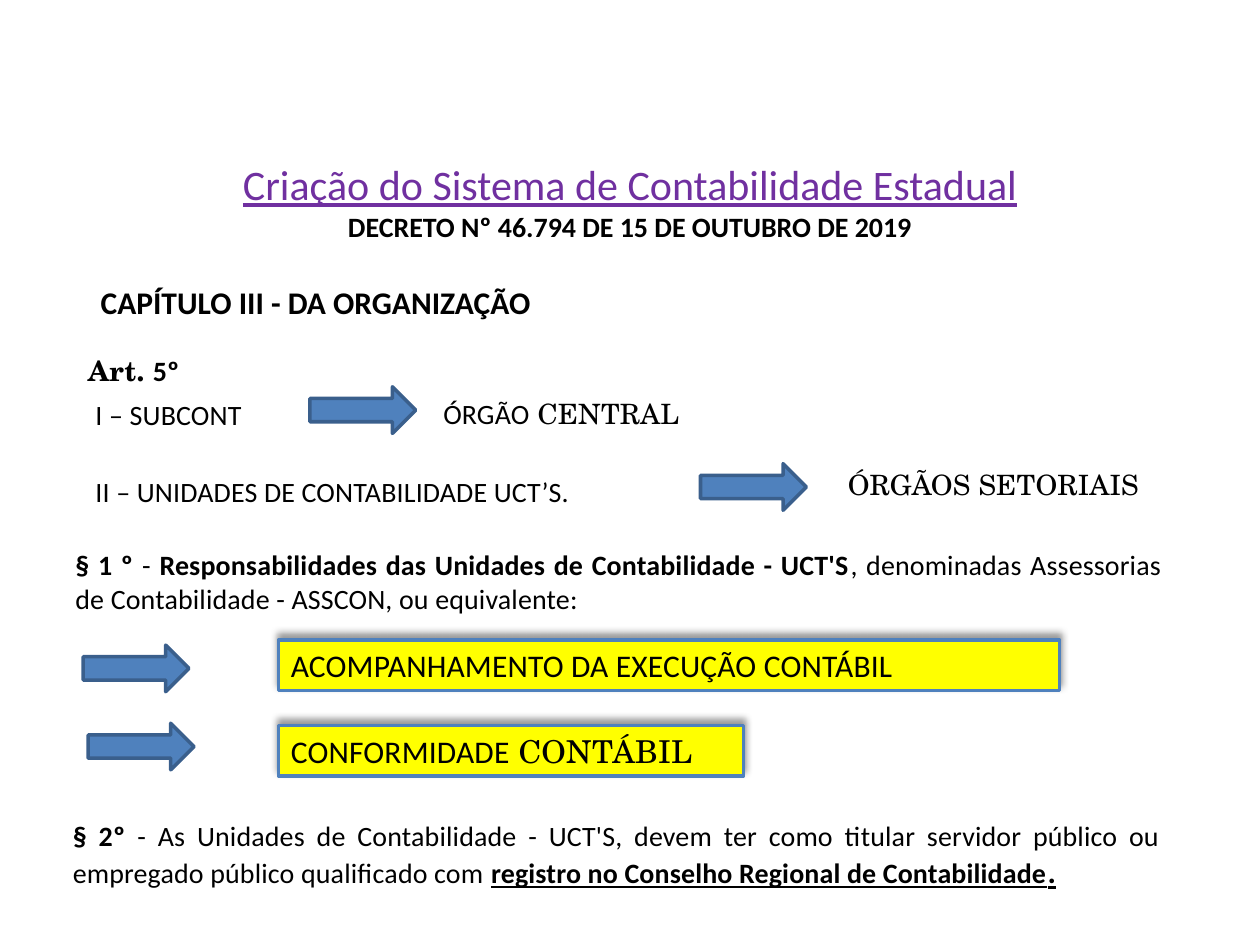
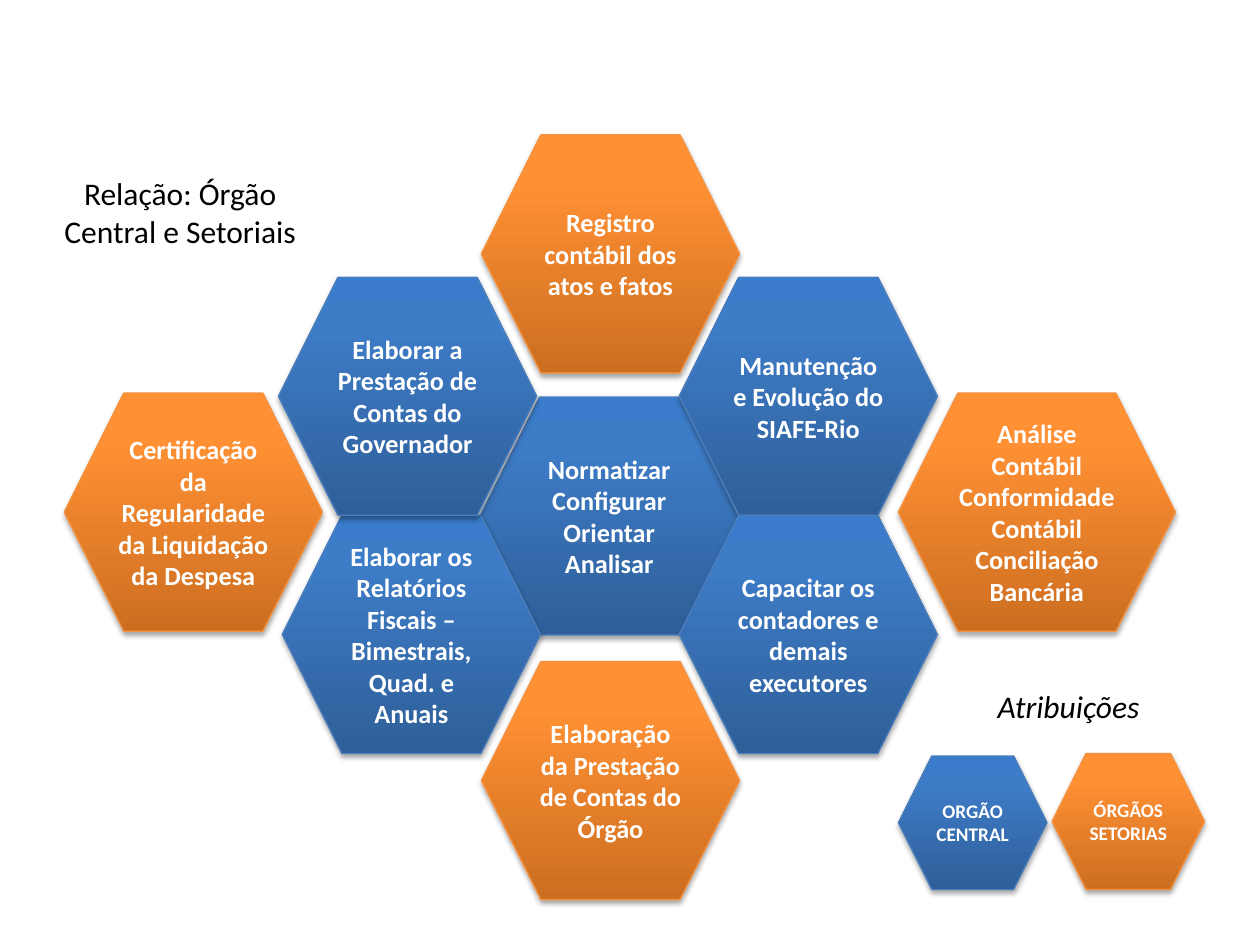
from lxml import etree
from pptx import Presentation
from pptx.dml.color import RGBColor
from pptx.enum.shapes import MSO_SHAPE
from pptx.enum.text import MSO_ANCHOR, MSO_AUTO_SIZE, PP_ALIGN
from pptx.oxml.ns import qn
from pptx.util import Emu, Pt

LEFT, CENTER, JUSTIFY = PP_ALIGN.LEFT, PP_ALIGN.CENTER, PP_ALIGN.JUSTIFY
TOP, MIDDLE = MSO_ANCHOR.TOP, MSO_ANCHOR.MIDDLE
NO_AUTOFIT = MSO_AUTO_SIZE.NONE
RECTANGLE, ARROW, HEXAGON = MSO_SHAPE.RECTANGLE, MSO_SHAPE.RIGHT_ARROW, MSO_SHAPE.HEXAGON

PX = 9144  # 100 px to the inch
TITLE_ONLY = 5
SANS, SERIF = "Calibri", "TeX Gyre Schola"
BLACK, WHITE, PURPLE, YELLOW = "000000", "FFFFFF", "7030A0", "FFFF00"
BLUE, DARK_BLUE = "4F81BD", "3A5F8C"
BREAK = "\v"

# Hexagon styles: gradient stops from bottom to top, and outline
CENTRAL = ([(0, "2F5F99"), (80, "3D7CC7"), (100, "3A7CCB")], "4B7EBC")
SECTORAL = ([(0, "CC6E20"), (80, "FF9034"), (100, "FF9136")], "F69240")
HEX_WIDTH, HEX_HEIGHT = 205, 189

# Run formats
BOLD = {"bold": True}
SERIF_RUN = {"name": SERIF}


def rgb(value):
    return RGBColor.from_string(value)


def add_color(parent, value):
    return etree.SubElement(parent, qn("a:srgbClr"), val=value)


class Deck:
    def __init__(self):
        self.prs = Presentation()
        self.prs.slide_width, self.prs.slide_height = Emu(1000 * PX), Emu(750 * PX)
        self.slide = None

    def new_slide(self):
        self.slide = self.prs.slides.add_slide(self.prs.slide_layouts[TITLE_ONLY])

    def set_text(self, shape, paragraphs, size, color=BLACK, align=LEFT, anchor=TOP,
                 wrap=True, spacing=0, **font):
        """Each paragraph is a string or a list of (text, run format) pairs."""
        frame = shape.text_frame
        frame.auto_size, frame.word_wrap = NO_AUTOFIT, wrap
        frame.vertical_anchor = anchor
        for i, content in enumerate(paragraphs):
            paragraph = frame.add_paragraph() if i else frame.paragraphs[0]
            paragraph.alignment = align
            paragraph.font.size, paragraph.font.name = Pt(size), font.get("name", SANS)
            paragraph.font.bold, paragraph.font.italic = font.get("bold"), font.get("italic")
            paragraph.font.color.rgb = rgb(color)
            runs = [(content, {})] if isinstance(content, str) else content
            for text, style in runs:
                if text == BREAK:
                    paragraph.add_line_break()
                else:
                    self.add_run(paragraph, text, style, spacing)

    def add_run(self, paragraph, text, style, spacing):
        run = paragraph.add_run()
        run.text = text
        for key, value in style.items():
            if key == "size":
                run.font.size = Pt(value)
            elif key == "color":
                run.font.color.rgb = rgb(value)
            else:
                setattr(run.font, key, value)
        if spacing:
            run._r.get_or_add_rPr().set("spc", str(spacing))

    def title(self, box, content, size):
        title = self.slide.shapes.title
        title.left, title.top, title.width, title.height = (Emu(v * PX) for v in box)
        self.set_text(title, [content], size, align=CENTER)

    def text(self, box, content, size=16, **style):
        shape = self.slide.shapes.add_textbox(*(Emu(v * PX) for v in box))
        self.set_text(shape, [content], size, **style)

    def shape(self, kind, box, fill, line, weight):
        shape = self.slide.shapes.add_shape(kind, *(Emu(v * PX) for v in box))
        shape.shadow.inherit = False
        if isinstance(fill, str):
            shape.fill.solid()
            shape.fill.fore_color.rgb = rgb(fill)
        else:
            self.gradient(shape, fill)
        shape.line.color.rgb, shape.line.width = rgb(line), Pt(weight)
        return shape

    def gradient(self, shape, stops):
        shape.fill.gradient()
        grad = shape._element.spPr.find(qn("a:gradFill"))
        for child in list(grad):
            grad.remove(child)
        stop_list = etree.SubElement(grad, qn("a:gsLst"))
        for position, color in stops:
            add_color(etree.SubElement(stop_list, qn("a:gs"), pos=str(position * 1000)), color)
        etree.SubElement(grad, qn("a:lin"), ang=str(270 * 60000), scaled="0")

    def shadow(self, shape, alpha, blur, distance, angle):
        effects = shape._element.spPr.find(qn("a:effectLst"))
        outer = etree.SubElement(effects, qn("a:outerShdw"), blurRad=str(Pt(blur)),
                                 dist=str(Pt(distance)), dir=str(angle * 60000),
                                 rotWithShape="0")
        etree.SubElement(add_color(outer, BLACK), qn("a:alpha"), val=str(alpha * 1000))

    def arrow(self, left, top):
        self.shape(ARROW, (left, top, 84, 37), BLUE, DARK_BLUE, 2)

    def highlight(self, box, content):
        shape = self.shape(RECTANGLE, box, YELLOW, BLUE, 2)
        self.shadow(shape, 40, 4, 3, 270)
        self.set_text(shape, [content], 18, spacing=10)

    def hexagon(self, left, top, role, paragraphs, width=HEX_WIDTH, height=HEX_HEIGHT, size=15):
        fill, line = role
        shape = self.shape(HEXAGON, (left, top, width, height), fill, line, 0.75)
        self.shadow(shape, 35, 3.1, 1.8, 90)
        self.set_text(shape, paragraphs, size, WHITE, CENTER, MIDDLE, bold=True)


def decree_slide(deck):
    deck.new_slide()
    deck.title((50, 121, 900, 125), [
        ("Criação do Sistema de Contabilidade Estadual", {"color": PURPLE, "underline": True}),
        (BREAK, {}),
        ("DECRETO Nº 46.794 DE 15 DE OUTUBRO DE 2019", {"size": 16, "bold": True}),
    ], 24)
    deck.text((70, 220, 485, 40), "CAPÍTULO III - DA ORGANIZAÇÃO", 18, bold=True)

    # Article 5: the bodies of the system
    deck.text((66, 311, 174, 37), "I – SUBCONT", spacing=10)
    deck.text((66, 372, 526, 37), "II – UNIDADES DE CONTABILIDADE UCT’S.", spacing=10)
    deck.text((60, 276, 797, 37), [("Art. ", SERIF_RUN), ("5º", {})], bold=True, spacing=10)
    deck.text((342, 310, 233, 37), [("ÓRGÃO", {}), (" CENTRAL", SERIF_RUN)], spacing=10)
    deck.text((663, 366, 301, 37), "ÓRGÃOS SETORIAIS", name=SERIF, spacing=10)

    # Paragraph 1: duties of the units
    deck.text((50, 430, 882, 64), [
        ("§ 1 º", BOLD),
        (" - ", {}),
        ("Responsabilidades das Unidades de Contabilidade - UCT'S", BOLD),
        (", denominadas Assessorias de Contabilidade - ASSCON, ou equivalente:", {}),
    ], align=JUSTIFY, spacing=10)
    deck.highlight((221, 508, 620, 40), "ACOMPANHAMENTO DA EXECUÇÃO CONTÁBIL")
    deck.highlight((221, 576, 369, 40), [("CONFORMIDADE", {}), (" CONTÁBIL", SERIF_RUN)])
    for left, top in [(246, 307), (70, 574), (556, 368), (66, 512)]:
        deck.arrow(left, top)

    # Paragraph 2: who heads a unit
    deck.text((48, 645, 884, 67), [
        ("§ 2º", BOLD),
        (" - As Unidades de Contabilidade - UCT'S, devem ter como titular "
         "servidor público ou empregado público qualificado com ", {}),
        ("registro no Conselho Regional de Contabilidade", {"bold": True, "underline": True}),
        (".", {"bold": True, "underline": True, "size": 18}),
    ], align=JUSTIFY, spacing=10)


def relation_slide(deck):
    deck.new_slide()
    deck.title((18, 133, 250, 89), "Relação: Órgão Central e Setoriais", 18)

    # Honeycomb of duties
    middle, right, upper, side = 382, 539, 220, 312
    lower = upper + HEX_HEIGHT
    deck.hexagon(middle, 107, SECTORAL, ["Registro contábil dos atos e fatos"])
    deck.hexagon(middle, 525, SECTORAL, ["Elaboração da Prestação de Contas do Órgão"])
    deck.hexagon(381, 315, CENTRAL, ["Normatizar", "Configurar", "Orientar", "Analisar"])
    deck.hexagon(right, upper, CENTRAL, ["Manutenção e Evolução do SIAFE-Rio"])
    deck.hexagon(right, lower, CENTRAL, ["Capacitar os contadores e demais executores"])
    deck.hexagon(224, lower, CENTRAL,
                 ["Elaborar os Relatórios Fiscais – Bimestrais, Quad. e Anuais"])
    deck.hexagon(713, side, SECTORAL,
                 ["Análise Contábil", "Conformidade Contábil", "Conciliação Bancária"], width=220)
    deck.hexagon(51, side, SECTORAL, ["Certificação da Regularidade da Liquidação da Despesa"])
    deck.hexagon(221, upper, CENTRAL, ["Elaborar a Prestação de Contas do Governador"])

    # Legend
    deck.text((782, 540, 136, 40), "Atribuições", 18, italic=True, wrap=False)
    deck.hexagon(713, 600, CENTRAL, ["ORGÃO CENTRAL"], 118, 106, 11)
    deck.hexagon(835, 598, SECTORAL, ["ÓRGÃOS SETORIAS"], 121, 108, 11)


def main():
    deck = Deck()
    decree_slide(deck)
    relation_slide(deck)
    deck.prs.save("out.pptx")


if __name__ == "__main__":
    main()
